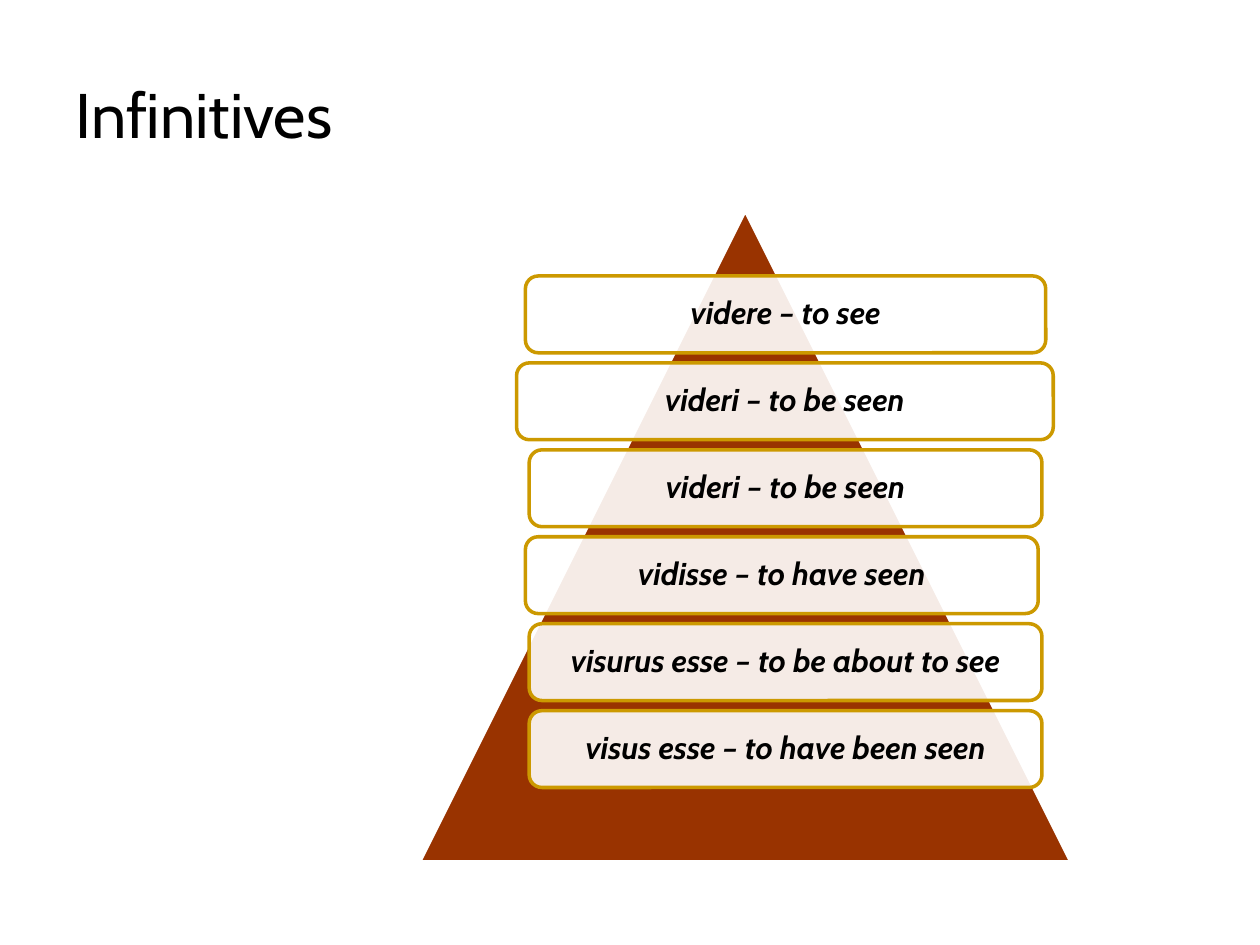
import dataclasses
import pptx
import pptx.util
import pptx.dml.color
import pptx.enum.shapes
import pptx.enum.text
import pptx.oxml
import pptx.oxml.ns

Inches, Pt = pptx.util.Inches, pptx.util.Pt
Kind = pptx.enum.shapes.MSO_SHAPE
Align, Anchor = pptx.enum.text.PP_ALIGN, pptx.enum.text.MSO_ANCHOR
WIDE, HIGH = 10, 7.5
TOP, STEP, TALL = 2.19, 0.69, 0.61  # rows of the bar grid


@dataclasses.dataclass
class Bar:
    text: str
    left: float = 0.42  # shares of the slide's width
    width: float = 0.407


BARS = [
    Bar("videre – to see", 0.417, 0.413),
    Bar("videri – to be seen", 0.41, 0.426),
    Bar("videri – to be seen"),
    Bar("vidisse – to have seen", 0.417),
    Bar("visurus esse – to be about to see"),
    Bar("visus esse – to have been seen"),
]


def color(code: str) -> pptx.dml.color.RGBColor:
    return pptx.dml.color.RGBColor.from_string(code)


def apply(item, form: dict) -> None:
    for name, value in form.items():
        setattr(item, name, value)


def style(font, size: int, **more) -> None:
    apply(font, {"name": "Cabin", "size": Pt(size), **more})
    font.color.rgb = color("000000")


def draw(slide, kind, box: tuple, fill: str, line: str):
    shape = slide.shapes.add_shape(kind, *map(Inches, box))
    shape.shadow.inherit = False
    shape.fill.solid()
    shape.fill.fore_color.rgb = color(fill)
    shape.line.color.rgb = color(line)
    shape.line.width = Pt(2)
    return shape


def fade(shape, share: int) -> None:
    """Set the opacity of a solid fill, in percent."""
    tone = shape.fill._xPr.find(".//" + pptx.oxml.ns.qn("a:srgbClr"))
    alpha = pptx.oxml.parse_xml(
        f'<a:alpha {pptx.oxml.ns.nsdecls("a")} val="{share * 1000}"/>')
    tone.append(alpha)


def add_bar(slide, row: int, bar: Bar) -> None:
    box = (bar.left * WIDE, TOP + row * STEP, bar.width * WIDE, TALL)
    shape = draw(slide, Kind.ROUNDED_RECTANGLE, box, "FFFFFF", "CC9900")
    fade(shape, 90)
    frame = shape.text_frame
    sides = ("left", "right", "top", "bottom")
    apply(frame, {f"margin_{side}": Inches(0.1) for side in sides})
    apply(frame, {"word_wrap": True, "vertical_anchor": Anchor.MIDDLE})
    para = frame.paragraphs[0]
    para.text = bar.text
    apply(para, {"alignment": Align.CENTER, "line_spacing": 0.9,
                 "space_after": Pt(6.3)})
    style(para.runs[0].font, 18, bold=True, italic=True)


def main() -> None:
    deck = pptx.Presentation()
    apply(deck, {"slide_width": Inches(WIDE), "slide_height": Inches(HIGH)})
    slide = deck.slides.add_slide(deck.slide_layouts[5])

    # Title
    title = slide.shapes.title
    apply(title, {"left": Inches(0.5), "top": Inches(0.08),
                  "width": Inches(7.42), "height": Inches(1.17)})
    frame = title.text_frame
    frame.text = "Infinitives"
    apply(frame, {"vertical_anchor": Anchor.BOTTOM,
                  "auto_size": pptx.enum.text.MSO_AUTO_SIZE.NONE})
    frame.paragraphs[0].alignment = Align.LEFT
    style(frame.paragraphs[0].runs[0].font, 36)

    # Pyramid with its bars
    draw(slide, Kind.ISOSCELES_TRIANGLE, (3.33, 1.67, 5.17, 5.17),
         "993300", "FFFFFF")
    for row, bar in enumerate(BARS):
        add_bar(slide, row, bar)

    deck.save("out.pptx")


if __name__ == "__main__":
    main()
